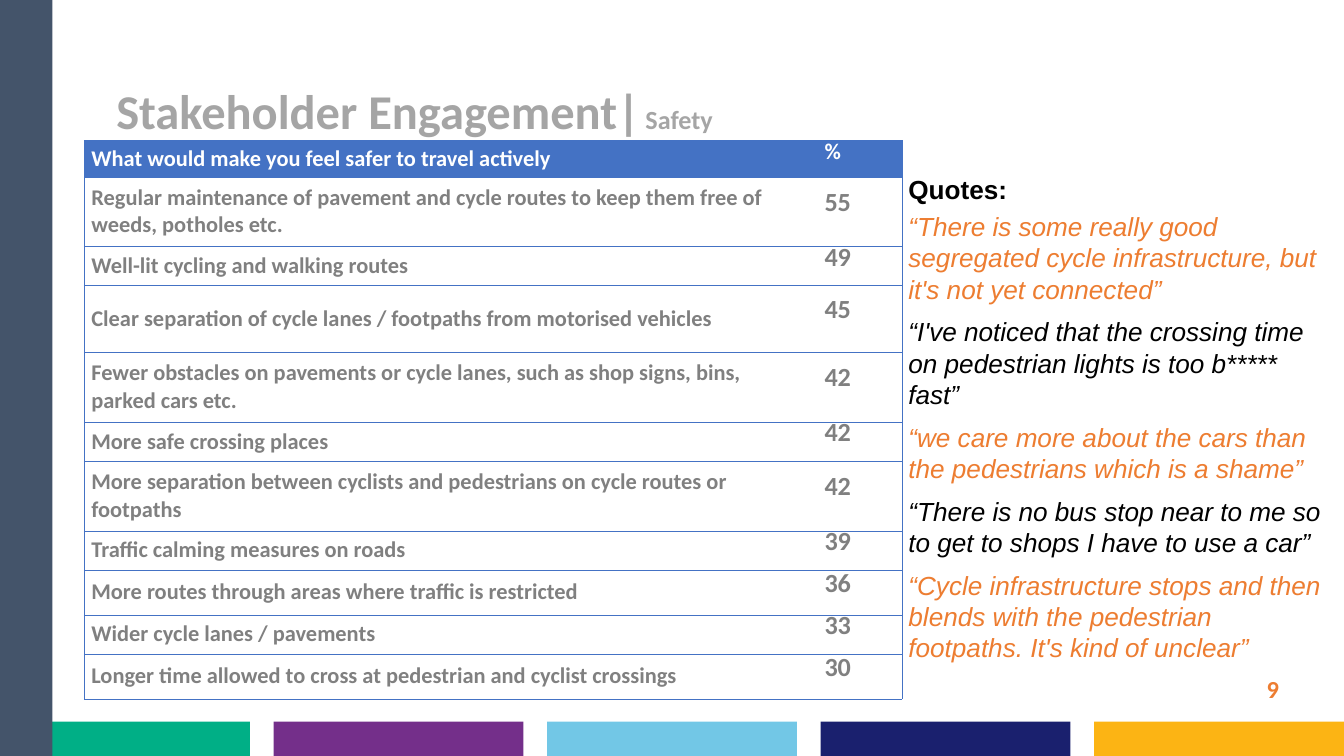
from lxml import etree
from pptx import Presentation
from pptx.dml.color import RGBColor
from pptx.enum.shapes import MSO_SHAPE
from pptx.enum.text import MSO_ANCHOR, MSO_AUTO_SIZE, PP_ALIGN
from pptx.oxml.ns import qn
from pptx.util import Inches, Pt

RECT = MSO_SHAPE.RECTANGLE
MIDDLE, BOTTOM = MSO_ANCHOR.MIDDLE, MSO_ANCHOR.BOTTOM
LEFT, RIGHT = PP_ALIGN.LEFT, PP_ALIGN.RIGHT
NO_FIT = MSO_AUTO_SIZE.NONE

BLACK = RGBColor(0x00, 0x00, 0x00)
WHITE = RGBColor(0xFF, 0xFF, 0xFF)
GREY = RGBColor(0x80, 0x80, 0x80)
TITLE_GREY = RGBColor(0xA5, 0xA5, 0xA5)
BLUE = RGBColor(0x44, 0x72, 0xC4)
SLATE = RGBColor(0x44, 0x54, 0x6A)
ORANGE = RGBColor(0xED, 0x7D, 0x31)
BAR_COLORS = [
    RGBColor(0x00, 0xAF, 0x86),
    RGBColor(0x74, 0x2F, 0x8A),
    RGBColor(0x72, 0xC7, 0xE6),
    RGBColor(0x1A, 0x20, 0x6E),
    RGBColor(0xFC, 0xB4, 0x14),
]

TITLE = [("Stakeholder Engagement|", 52), (" ", 24), ("Safety", 28)]
HEADER = ("What would make you feel safer to travel actively", "%")
ANSWERS = [
    ("Regular maintenance of pavement and cycle routes to keep them free of "
     "weeds, potholes etc.", 55, 1.04),
    ("Well-lit cycling and walking routes", 49, 0.58),
    ("Clear separation of cycle lanes / footpaths from motorised vehicles", 45, 0.99),
    ("Fewer obstacles on pavements or cycle lanes, such as shop signs, bins, "
     "parked cars etc.", 42, 1.04),
    ("More safe crossing places", 42, 0.58),
    ("More separation between cyclists and pedestrians on cycle routes or "
     "footpaths", 42, 1.04),
    ("Traffic calming measures on roads", 39, 0.58),
    ("More routes through areas where traffic is restricted", 36, 0.67),
    ("Wider cycle lanes / pavements", 33, 0.58),
    ("Longer time allowed to cross at pedestrian and cyclist crossings", 30, 0.67),
]
QUOTES = [
    "“There is some really good segregated cycle infrastructure, but it's not yet connected”",
    "“I've noticed that the crossing time on pedestrian lights is too b***** fast”",
    "“we care more about the cars than the pedestrians which is a shame”",
    "“There is no bus stop near to me so to get to shops I have to use a car”",
    "“Cycle infrastructure stops and then blends with the pedestrian footpaths. "
    "It's kind of unclear”",
]


def set_attrs(obj, values):
    """Set each attribute of obj from a dict of values."""
    for name, value in values.items():
        setattr(obj, name, value)


def add_run(p, text, size, color, name="Calibri", bold=True, italic=False):
    """Add a formatted run to a paragraph."""
    r = p.add_run()
    r.text = text
    set_attrs(r.font, {"size": Pt(size), "name": name, "bold": bold, "italic": italic})
    r.font.color.rgb = color


def add_block(s, x, y, w, h, color):
    """Add a plain filled rectangle."""
    sp = s.shapes.add_shape(RECT, Inches(x), Inches(y), Inches(w), Inches(h))
    sp.shadow.inherit = False
    sp.fill.solid()
    sp.fill.fore_color.rgb = color
    sp.line.fill.background()


def add_frame(s, x, y, w, h, bar_w=3.72, bar_h=0.51):
    """Add the side band and the evenly spaced bars along the foot of the box."""
    pitch = (w - bar_w) / (len(BAR_COLORS) - 1)
    for i, color in enumerate(BAR_COLORS):
        add_block(s, x + i * pitch, y + h - bar_h, bar_w, bar_h, color)
    add_block(s, x, y, 0.78, h, SLATE)


def add_title(s, x, y, w, h):
    """Place and fill the title placeholder."""
    sp = s.shapes.title
    set_attrs(sp, {"left": Inches(x), "top": Inches(y),
                   "width": Inches(w), "height": Inches(h)})
    tf = sp.text_frame
    set_attrs(tf, {"margin_left": 0, "margin_right": 0, "margin_top": 0,
                   "margin_bottom": 0, "vertical_anchor": BOTTOM,
                   "word_wrap": True, "auto_size": NO_FIT})
    p = tf.paragraphs[0]
    set_attrs(p, {"alignment": LEFT, "line_spacing": 0.9})
    for text, size in TITLE:
        add_run(p, text, size, TITLE_GREY)


def set_borders(cell, sides):
    """Draw thin blue lines on the named sides of a cell and none on the others."""
    tc_pr = cell._tc.get_or_add_tcPr()
    for i, side in enumerate("LRTB"):
        ln = etree.Element(qn(f"a:ln{side}"), w=str(Pt(0.5)))
        if side in sides:
            fill = etree.SubElement(ln, qn("a:solidFill"))
            etree.SubElement(fill, qn("a:srgbClr"), val=str(BLUE))
        else:
            etree.SubElement(ln, qn("a:noFill"))
        tc_pr.insert(i, ln)


def fill_cell(cell, text, size, is_header, is_value):
    """Write and format one table cell."""
    set_attrs(cell, {"margin_left": Inches(0.11), "margin_right": Inches(0.11),
                     "margin_top": Inches(0.07), "margin_bottom": Inches(0.07),
                     "vertical_anchor": MIDDLE})
    if is_header:
        cell.fill.solid()
        cell.fill.fore_color.rgb = BLUE
    else:
        cell.fill.background()
    p = cell.text_frame.paragraphs[0]
    if is_value:
        p.line_spacing = Pt(15)
    if is_value or not is_header:
        p.space_after = Pt(6)
    add_run(p, text, size, WHITE if is_header else GREY)
    set_borders(cell, "RTB" if is_value else "LTB")


def add_answers(s, x, y, w, h, value_w=1.26):
    """Add the table of answers and percentages."""
    rows = [(*HEADER, 0.45), *ANSWERS]
    table = s.shapes.add_table(len(rows), 2, Inches(x), Inches(y),
                               Inches(w), Inches(h)).table
    table.horz_banding = False
    table.columns[0].width = Inches(w - value_w)
    table.columns[1].width = Inches(value_w)
    for i, (answer, value, row_h) in enumerate(rows):
        table.rows[i].height = Inches(row_h)
        fill_cell(table.cell(i, 0), answer, 24, i == 0, False)
        fill_cell(table.cell(i, 1), str(value), 28 if i else 24, i == 0, True)


def add_quotes(s, x, y, w, h):
    """Add the quotes in alternating colours under their heading."""
    tf = s.shapes.add_textbox(Inches(x), Inches(y), Inches(w), Inches(h)).text_frame
    tf.word_wrap = True
    add_run(tf.paragraphs[0], "Quotes:", 28, BLACK, "Arial")
    for i, quote in enumerate(QUOTES):
        p = tf.add_paragraph()
        set_attrs(p, {"space_before": Pt(6), "space_after": Pt(6)})
        add_run(p, quote, 28, BLACK if i % 2 else ORANGE, "Arial", False, True)


def add_page_number(s, x, y, w, h):
    """Add the page number at the lower right."""
    tf = s.shapes.add_textbox(Inches(x), Inches(y), Inches(w), Inches(h)).text_frame
    set_attrs(tf, {"word_wrap": True, "vertical_anchor": BOTTOM})
    p = tf.paragraphs[0]
    p.alignment = RIGHT
    add_run(p, "9", 26.2, ORANGE)


def main():
    """Build the slide and save it."""
    prs = Presentation()
    set_attrs(prs, {"slide_width": Inches(20), "slide_height": Inches(11.25)})
    s = prs.slides.add_slide(prs.slide_layouts[5])
    add_frame(s, 0, 0, 20, 11.25)
    add_page_number(s, 17.56, 9.97, 1.57, 0.54)
    add_title(s, 1.73, 1.22, 12.28, 0.87)
    add_answers(s, 1.25, 2.09, 12.17, 8.35)
    add_quotes(s, 13.42, 2.53, 6.42, 8.09)
    prs.save("out.pptx")


if __name__ == "__main__":
    main()
